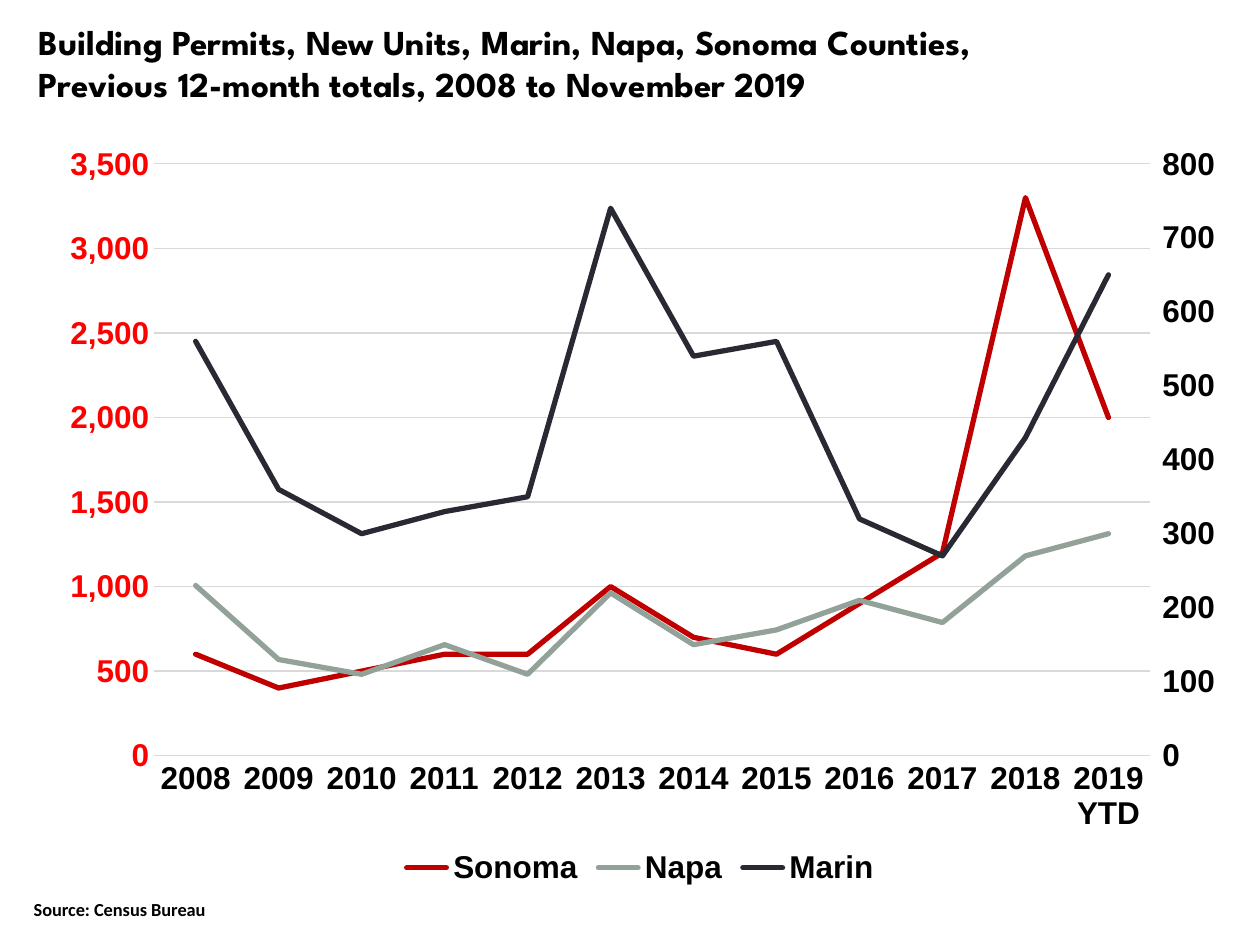
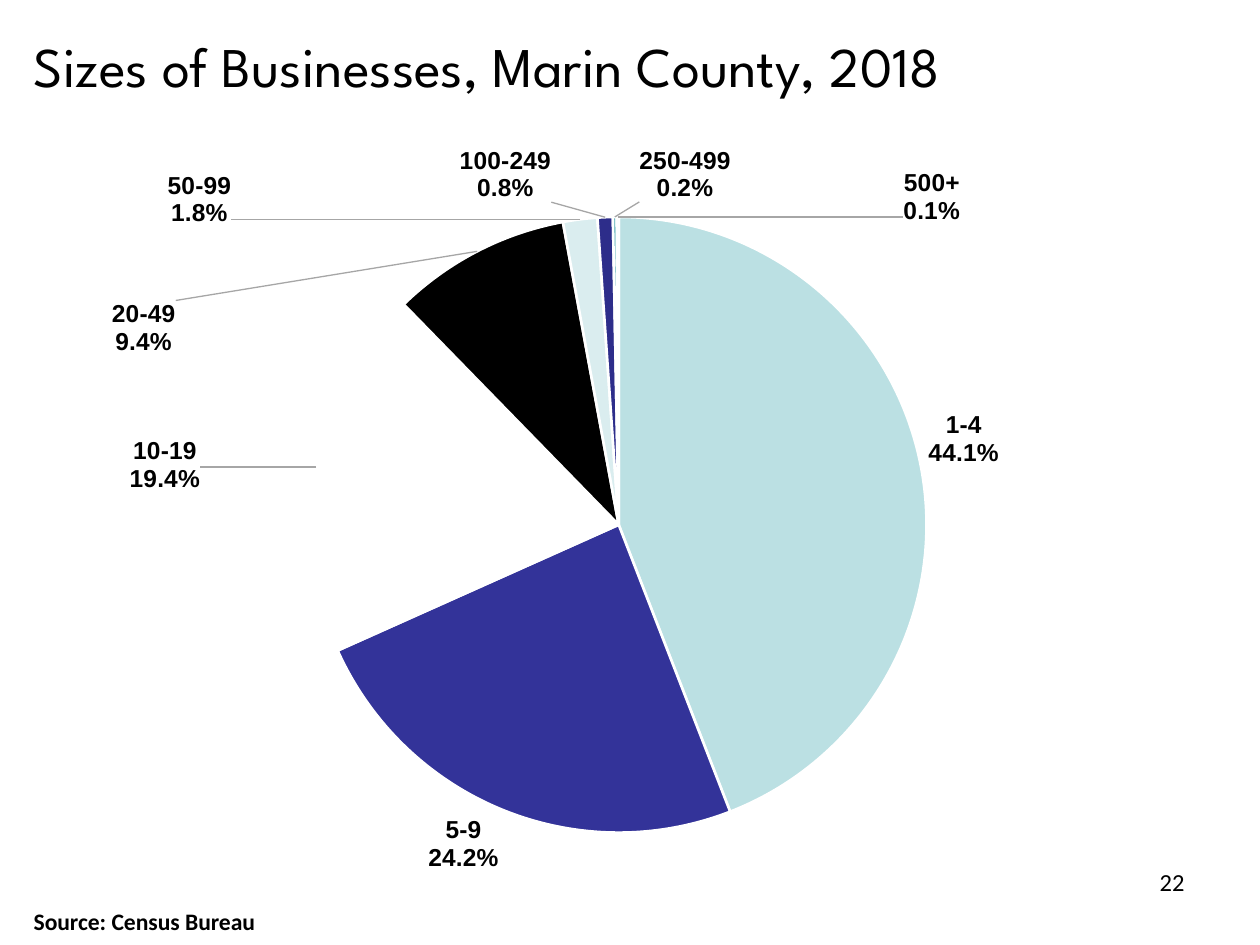
from copy import deepcopy

from pptx import Presentation
from pptx.chart.axis import ValueAxis
from pptx.chart.data import CategoryChartData
from pptx.dml.color import RGBColor
from pptx.enum.chart import (XL_CHART_TYPE, XL_LABEL_POSITION, XL_LEGEND_POSITION,
                             XL_MARKER_STYLE, XL_TICK_MARK)
from pptx.enum.text import MSO_ANCHOR, MSO_AUTO_SIZE, PP_ALIGN
from pptx.oxml import parse_xml
from pptx.oxml.ns import nsdecls
from pptx.util import Cm, Pt

NO_TICKS, OUTER_TICKS = XL_TICK_MARK.NONE, XL_TICK_MARK.OUTSIDE
LEFT, RIGHT = PP_ALIGN.LEFT, PP_ALIGN.RIGHT
TITLE_ONLY = 5

COLORS = {"text": "000000", "grid": "D9D9D9", "left_axis": "FF0000",
          "leader": "A6A6A6", "slice_edge": "FFFFFF"}
TITLE_FONT, NOTE_FONT, CHART_FONT = "League Spartan", "Calibri", "Arial"
SOURCE = "Source: Census Bureau"

# Boxes are left, top, width, height in centimetres.
PERMITS = {
    "title": "Building Permits, New Units, Marin, Napa, Sonoma Counties, \v"
             "Previous 12-month totals, 2008 to November 2019",
    "title_box": (0.53, 0.64, 24.13, 1.22),
    "title_font": {"size": Pt(20), "bold": True},
    "source_box": (0.43, 17.98, 10.46, 0.71),
    "source_size": 10.5,
    "chart_box": (0.84, 2.74, 24.13, 15.24),
    "plot": (0.094, 0.037, 0.832, 0.783),
    "years": [str(year) for year in range(2008, 2019)] + ["2019 YTD"],
    "counties": [
        ("Sonoma", "C00000", [600, 400, 500, 600, 600, 1000, 700, 600, 900, 1200, 3300, 2000]),
        ("Napa", "93A299", [230, 130, 110, 150, 110, 220, 150, 170, 210, 180, 270, 300]),
        ("Marin", "292934", [330, 230, 190, 180, 240, 520, 390, 390, 110, 90, 160, 350]),
    ],
    "left_counties": 1,
    "left_scale": (3500, 500),
    "right_scale": (800, 100),
}

BUSINESSES = {
    "title": "Sizes of Businesses, Marin County, 2018",
    "title_box": (0.43, 0.64, 21.59, 1.35),
    "title_font": {"size": Pt(32), "bold": False},
    "source_box": (0.43, 18.16, 13.97, 0.84),
    "source_size": 13.5,
    "page": "22",
    "page_box": (18.21, 17.35, 5.92, 1.31),
    "chart_box": (0.84, 2.74, 23.29, 15.42),
    "plot": (0.233, 0.106, 0.533, 0.805),
    # employees, percent of businesses, colour, label shift as a share of the chart
    "sizes": [
        ("1-4", 44.1, "BBE0E3", None),
        ("5-9", 24.2, "333399", None),
        ("10-19", 19.4, "FFFFFF", (-0.094, 0.035)),
        ("20-49", 9.4, "000000", (-0.258, 0.145)),
        ("50-99", 1.8, "DAEDEF", (-0.301, 0.02)),
        ("100-249", 0.8, "2D2D8A", (-0.086, -0.01)),
        ("250-499", 0.2, "48A8B0", (0.061, -0.01)),
        ("500+", 0.1, "1F1F5C", (0.272, 0.02)),
    ],
}


def apply(target, **formats):
    for attribute, value in formats.items():
        setattr(target, attribute, value)


def set_font(font, color=COLORS["text"], **formats):
    apply(font, **formats)
    font.color.rgb = RGBColor.from_string(color)


def set_line(line, color, points):
    line.width = Pt(points)
    line.color.rgb = RGBColor.from_string(color)


def cm_box(box):
    return [Cm(length) for length in box]


def add_note(slide, text, box, size, bold=False, align=LEFT):
    frame = slide.shapes.add_textbox(*cm_box(box)).text_frame
    frame.word_wrap = True
    paragraph = frame.paragraphs[0]
    apply(paragraph, text=text, alignment=align)
    set_font(paragraph.font, name=NOTE_FONT, size=Pt(size), bold=bold)


def add_page(deck, content):
    """Add a slide with its title and source line."""
    slide = deck.slides.add_slide(deck.slide_layouts[TITLE_ONLY])
    title = slide.shapes.title
    for side, length in zip(("left", "top", "width", "height"), cm_box(content["title_box"])):
        setattr(title, side, length)
    apply(title.text_frame, text=content["title"], word_wrap=True,
          auto_size=MSO_AUTO_SIZE.NONE, vertical_anchor=MSO_ANCHOR.MIDDLE)
    paragraph = title.text_frame.paragraphs[0]
    paragraph.alignment = LEFT
    for run in paragraph.runs:
        set_font(run.font, name=TITLE_FONT, **content["title_font"])
    add_note(slide, SOURCE, content["source_box"], content["source_size"], bold=True)
    return slide


def manual_layout(**values):
    parts = "".join(f'<c:{tag} val="{value}"/>' for tag, value in values.items())
    return parse_xml(f'<c:layout {nsdecls("c")}><c:manualLayout>{parts}</c:manualLayout></c:layout>')


def add_chart(slide, kind, content, categories, series):
    data = CategoryChartData()
    data.categories = categories
    for name, values in series:
        data.add_series(name, values)
    chart = slide.shapes.add_chart(kind, *cm_box(content["chart_box"]), data).chart
    apply(chart, has_title=False, has_legend=False)
    plot_area = chart.plots[0]._element.getparent()
    for layout in plot_area.xpath("c:layout"):
        plot_area.remove(layout)
    x, y, w, h = content["plot"]
    plot_area.insert(0, manual_layout(layoutTarget="inner", xMode="edge", yMode="edge",
                                      x=x, y=y, w=w, h=h))
    return chart


def format_value_axis(axis, scale, color, ticks):
    top, step = scale
    apply(axis, minimum_scale=0, maximum_scale=top, major_unit=step, major_tick_mark=ticks)
    axis.format.line.fill.background()
    set_font(axis.tick_labels.font, color, name=CHART_FONT, size=Pt(18), bold=True)


def add_right_axis(chart, left_count):
    """Move the series after left_count to a second axis pair and return its value axis."""
    left_plot = chart.plots[0]._element
    category = chart.category_axis._element
    value = chart.value_axis._element
    right_plot, right_category, right_value = map(deepcopy, (left_plot, category, value))
    for line in left_plot.xpath("c:ser")[left_count:]:
        left_plot.remove(line)
    for line in right_plot.xpath("c:ser")[:left_count]:
        right_plot.remove(line)
    left_plot.addnext(right_plot)
    value.addnext(right_value)
    right_value.addnext(right_category)

    category_id, value_id = "50010", "50020"
    for node, axis_id in zip(right_plot.xpath("c:axId"), (category_id, value_id)):
        node.set("val", axis_id)
    settings = [
        (right_category, {"axId": category_id, "crossAx": value_id, "delete": "1"}),
        (right_value, {"axId": value_id, "crossAx": category_id, "axPos": "r", "crosses": "max"}),
    ]
    for axis, values in settings:
        for tag, setting in values.items():
            axis.xpath(f"c:{tag}")[0].set("val", setting)
    right_axis = ValueAxis(right_value)
    right_axis.has_major_gridlines = False
    return right_axis


def build_permits(deck):
    slide = add_page(deck, PERMITS)
    counties = PERMITS["counties"]
    chart = add_chart(slide, XL_CHART_TYPE.LINE_STACKED, PERMITS, PERMITS["years"],
                      [(name, values) for name, _, values in counties])
    bold_text = {"name": CHART_FONT, "size": Pt(18), "bold": True}
    set_font(chart.font, **bold_text)
    chart.has_legend = True
    apply(chart.legend, position=XL_LEGEND_POSITION.BOTTOM, include_in_layout=False)
    set_font(chart.legend.font, **bold_text)

    plot = chart.plots[0]
    plot.vary_by_categories = False
    for line, (_, color, _) in zip(plot.series, counties):
        line.smooth = False
        line.marker.style = XL_MARKER_STYLE.NONE
        set_line(line.format.line, color, 3)
        line.format.line._get_or_add_ln().set("cap", "rnd")

    years = chart.category_axis
    years.major_tick_mark = NO_TICKS
    set_line(years.format.line, COLORS["grid"], 0.75)
    set_font(years.tick_labels.font, **bold_text)

    left_axis = chart.value_axis
    left_axis.has_major_gridlines = True
    set_line(left_axis.major_gridlines.format.line, COLORS["grid"], 0.75)
    apply(left_axis.tick_labels, number_format="#,##0", number_format_is_linked=False)
    right_axis = add_right_axis(chart, PERMITS["left_counties"])
    format_value_axis(left_axis, PERMITS["left_scale"], COLORS["left_axis"], NO_TICKS)
    format_value_axis(right_axis, PERMITS["right_scale"], COLORS["text"], OUTER_TICKS)


def shift_labels(labels, shifts):
    """Put each label on two lines, move the shifted ones and draw leader lines."""
    node = labels._element
    for old in node.xpath("c:showLeaderLines | c:leaderLines"):
        node.remove(old)
    separator = parse_xml(f'<c:separator {nsdecls("c")}>\n</c:separator>')
    node.append(separator)
    shared = list(node)
    moved = [(index, shift) for index, shift in enumerate(shifts) if shift]
    for place, (index, (x, y)) in enumerate(moved):
        label = parse_xml(f'<c:dLbl {nsdecls("c")}><c:idx val="{index}"/></c:dLbl>')
        label.append(manual_layout(x=x, y=y))
        label.extend(deepcopy(shared))
        node.insert(place, label)
    node.append(parse_xml(f'<c:showLeaderLines {nsdecls("c")} val="1"/>'))
    node.append(parse_xml(
        f'<c:leaderLines {nsdecls("c", "a")}><c:spPr><a:ln w="9525"><a:solidFill>'
        f'<a:srgbClr val="{COLORS["leader"]}"/></a:solidFill></a:ln></c:spPr></c:leaderLines>'))


def build_businesses(deck):
    slide = add_page(deck, BUSINESSES)
    add_note(slide, BUSINESSES["page"], BUSINESSES["page_box"], 14, align=RIGHT)
    employees, percents, colors, shifts = zip(*BUSINESSES["sizes"])
    chart = add_chart(slide, XL_CHART_TYPE.PIE, BUSINESSES, employees, [("Series 1", percents)])
    set_font(chart.font, name=CHART_FONT, size=Pt(10))
    pie = chart.plots[0].series[0]
    for index, color in enumerate(colors):
        piece = pie.points[index].format
        piece.fill.solid()
        piece.fill.fore_color.rgb = RGBColor.from_string(color)
        set_line(piece.line, COLORS["slice_edge"], 1.5)
    labels = pie.data_labels
    apply(labels, show_value=False, show_percentage=True, show_category_name=True,
          number_format="0.0%", number_format_is_linked=False,
          position=XL_LABEL_POSITION.OUTSIDE_END)
    set_font(labels.font, name=CHART_FONT, size=Pt(14), bold=True)
    shift_labels(labels, shifts)


def main():
    deck = Presentation()
    apply(deck, slide_width=Cm(25.4), slide_height=Cm(19.05))
    build_permits(deck)
    build_businesses(deck)
    deck.save("out.pptx")


if __name__ == "__main__":
    main()
